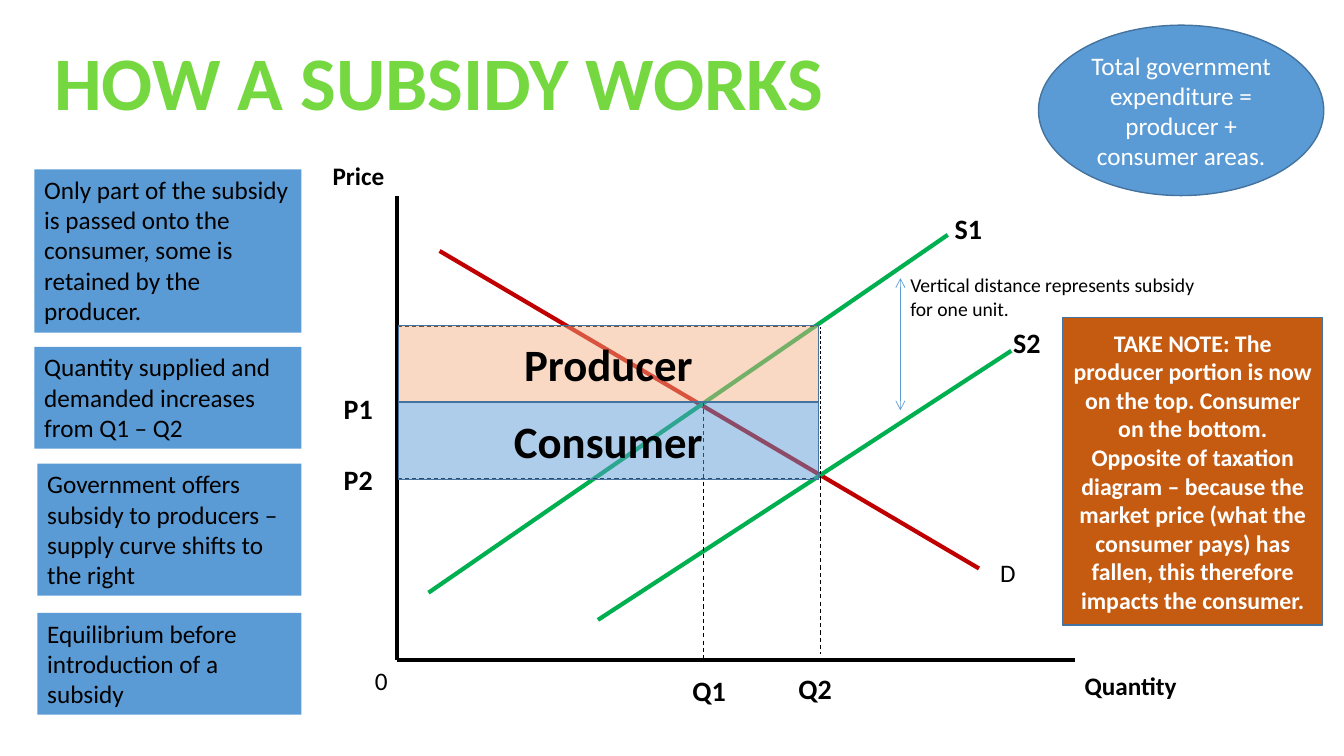
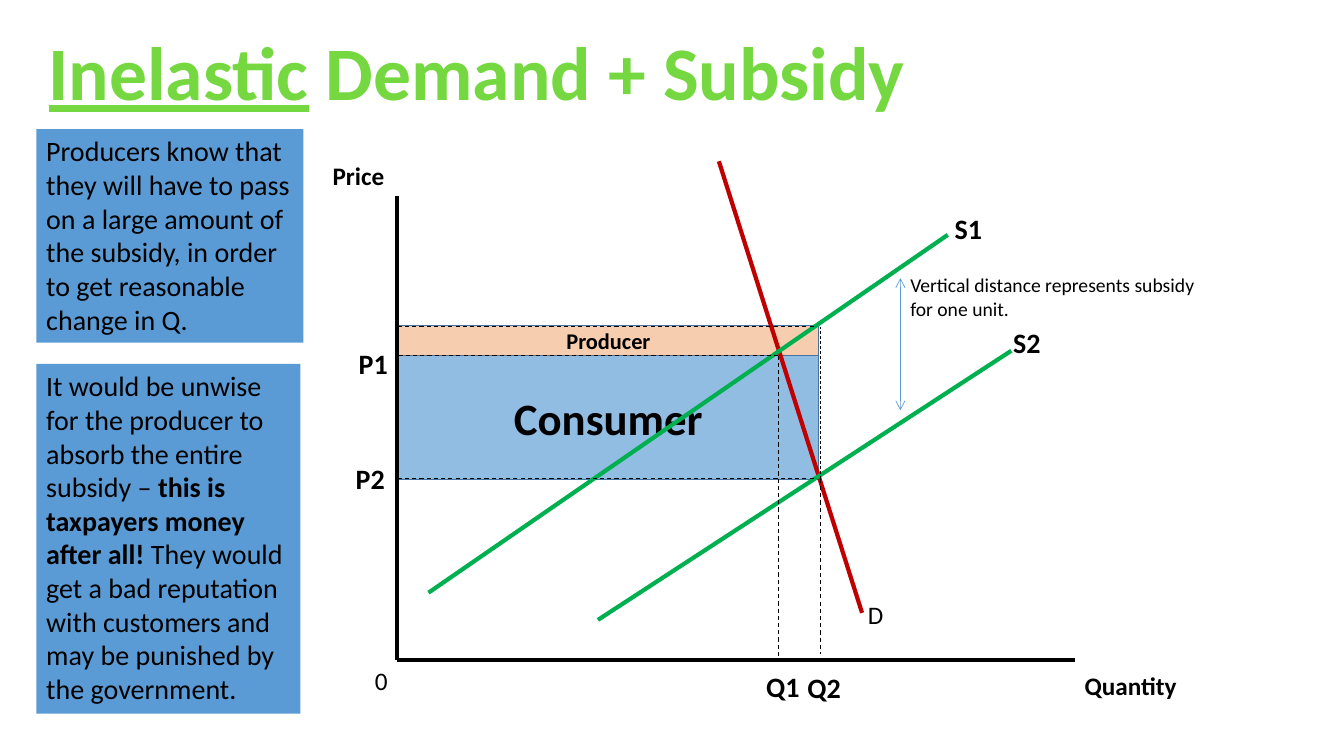
from lxml.etree import SubElement
from pptx import Presentation
from pptx.dml.color import RGBColor
from pptx.enum.dml import MSO_LINE
from pptx.enum.shapes import MSO_CONNECTOR, MSO_SHAPE
from pptx.enum.text import MSO_ANCHOR, MSO_AUTO_SIZE, PP_ALIGN
from pptx.oxml.ns import qn
from pptx.util import Inches, Pt

FONT = "Calibri"
BLACK, WHITE = "000000", "FFFFFF"
TITLE_GREEN, SUPPLY_GREEN, DEMAND_RED = "75D840", "00B050", "C00000"
BLUE, BLUE_EDGE, ORANGE, PEACH = "5B9BD5", "43739E", "C55A11", "F4B183"

PRICE_AXIS, QUANTITY_AXIS = 3.94, 6.55
TOP_PRICE, P2, Q2 = 3.24, 4.75, 8.14
AREA_LEFT, AREA_WIDTH, AREA_TOP, AREA_BOTTOM = 3.95, 4.17, 3.23, 4.76
AREA_LABEL_SIZE, LINE_HEIGHT = 32, 1.3

AXES = [(PRICE_AXIS, 1.94, PRICE_AXIS, QUANTITY_AXIS),
        (PRICE_AXIS, QUANTITY_AXIS, 10.66, QUANTITY_AXIS)]
SUPPLY_CURVES = [(4.25, 5.88, 9.4, 2.33), (5.93, 6.15, 10.03, 3.48)]
SHARED_LABELS = [
    ("Quantity", 10.66, 6.6, 18, True),
    ("Price", 3.2, 1.54, 18, True),
    ("0", 3.62, 6.55, 18, False),
    ("S1", 9.37, 2.05, 20, True),
    ("S2", 9.95, 3.18, 20, True),
]
DISTANCE_NOTE = "Vertical distance represents subsidy\vfor one unit."

SLIDES = [
    {
        "title": [("HOW A SUBSIDY WORKS", {})],
        "title_at": (0.4, 0.3, 7.91, 1.01),
        "demand": (4.36, 2.49, 9.71, 5.64),
        "q1": 6.98, "p1": 3.99,
        "areas_in_front": True,
        "opacity": {"Producer": 48, "Consumer": 49},
        "labels": [("D", 9.82, 5.48, 18, False), ("Q1", 6.77, 6.63, 20, True),
                   ("P1", 3.31, 3.83, 20, True), ("Q2", 7.82, 6.61, 20, True),
                   ("P2", 3.31, 4.54, 20, True)],
        "note_size": 18,
        "notes": [
            ((0.34, 1.68, 2.65, 1.62), [("Only part of the subsidy\vis passed onto the consumer, "
                                         "some is retained by the producer.", {})]),
            ((0.34, 3.44, 2.65, 1.01), [("Quantity supplied and demanded increases from Q1 – Q2", {})]),
            ((0.37, 4.6, 2.62, 1.31), [("Government offers subsidy to producers – "
                                        "supply curve shifts to the right", {})]),
            ((0.37, 6.08, 2.62, 1.01), [("Equilibrium before introduction of a subsidy", {})]),
        ],
        "callouts": [
            (MSO_SHAPE.OVAL, (10.3, 0.25, 2.83, 1.69), BLUE, 18, False,
             "Total government expenditure = producer + consumer areas."),
            (MSO_SHAPE.RECTANGLE, (10.54, 3.15, 2.58, 3.05), ORANGE, 17, True,
             "TAKE NOTE: The producer portion is now on the top. Consumer on the bottom. "
             "Opposite of taxation diagram – because the market price (what the consumer pays) "
             "has fallen, this therefore impacts the consumer."),
        ],
    },
    {
        "title": [("Inelastic", {"underline": True}), (" Demand + Subsidy", {})],
        "title_at": (0.34, 0.2, 8.78, 1.01),
        "demand": (7.13, 1.6, 8.55, 6.08),
        "q1": 7.72, "p1": 3.53,
        "areas_in_front": False,
        "opacity": {"Producer": 64, "Consumer": 66},
        "labels": [("D", 8.51, 5.9, 18, False), ("Q1", 7.5, 6.59, 20, True),
                   ("P1", 3.46, 3.39, 20, True), ("Q2", 7.91, 6.6, 20, True),
                   ("P2", 3.43, 4.53, 20, True)],
        "note_size": 20,
        "notes": [
            ((0.36, 1.28, 2.65, 2.12), [("Producers know that they will have to pass on a large amount "
                                         "of the subsidy, in order to get reasonable change in Q.", {})]),
            ((0.36, 3.61, 2.62, 3.47), [
                ("It would be unwise for the producer to absorb the entire subsidy – ", {}),
                ("this is taxpayers money after all! ", {"bold": True}),
                ("They would get a bad reputation with customers and may be punished "
                 "by the government.", {})]),
        ],
        "callouts": [],
    },
]


def rgb(value):
    return RGBColor.from_string(value)


def write(shape, spans, size, color=BLACK, bold=None, align=PP_ALIGN.LEFT,
          anchor=MSO_ANCHOR.TOP, wrap=True):
    frame = shape.text_frame
    frame.word_wrap = wrap
    frame.auto_size = MSO_AUTO_SIZE.NONE
    frame.vertical_anchor = anchor
    para = frame.paragraphs[0]
    para.alignment = align
    para.font.name, para.font.size, para.font.bold = FONT, Pt(size), bold
    para.font.color.rgb = rgb(color)
    for text, style in spans:
        for index, piece in enumerate(text.split("\v")):
            if index:
                para.add_line_break()
            span = para.add_run()
            span.text = piece
            for name, value in style.items():
                setattr(span.font, name, value)


def add_text(page, place, text, size, bold=False):
    box = page.shapes.add_textbox(*map(Inches, place))
    write(box, [(text, {})], size, bold=bold)


def add_panel(page, kind, place, fill, edge=None, opacity=None):
    panel = page.shapes.add_shape(kind, *map(Inches, place))
    panel.shadow.inherit = False
    panel.fill.solid()
    panel.fill.fore_color.rgb = rgb(fill)
    if opacity:
        color = panel.fill._xPr.find(".//" + qn("a:srgbClr"))
        SubElement(color, qn("a:alpha"), val=str(opacity * 1000))
    if edge:
        panel.line.color.rgb = rgb(edge)
        panel.line.width = Pt(1)
    else:
        panel.line.fill.background()
    return panel


def add_line(page, ends, color, width, dashed=False, arrows=False):
    line = page.shapes.add_connector(MSO_CONNECTOR.STRAIGHT, *map(Inches, ends))
    line.line.color.rgb = rgb(color)
    line.line.width = Pt(width)
    if dashed:
        line.line.dash_style = MSO_LINE.DASH
    properties = line._element.spPr
    if arrows:
        for end in ("a:headEnd", "a:tailEnd"):
            SubElement(properties.find(qn("a:ln")), qn(end), type="arrow")
    SubElement(properties, qn("a:effectLst"))


def add_areas(page, content):
    split = content["p1"]
    for name, fill, top, bottom in (("Consumer", BLUE, split, AREA_BOTTOM),
                                    ("Producer", PEACH, AREA_TOP, split)):
        height = bottom - top
        area = add_panel(page, MSO_SHAPE.RECTANGLE, (AREA_LEFT, top, AREA_WIDTH, height),
                         fill, BLUE_EDGE, content["opacity"][name])
        area.text_frame.margin_top = area.text_frame.margin_bottom = 0
        size = min(AREA_LABEL_SIZE, int(height * 72 / LINE_HEIGHT))
        write(area, [(name, {})], size, bold=True, align=PP_ALIGN.CENTER, anchor=MSO_ANCHOR.MIDDLE)


def add_diagram(page, content):
    q1, p1 = content["q1"], content["p1"]
    if not content["areas_in_front"]:
        add_areas(page, content)
    for axis in AXES:
        add_line(page, axis, BLACK, 3)
    add_line(page, content["demand"], DEMAND_RED, 3)
    for curve in SUPPLY_CURVES:
        add_line(page, curve, SUPPLY_GREEN, 3)
    for guide in ((q1, p1, q1, QUANTITY_AXIS), (q1, p1, PRICE_AXIS, p1),
                  (Q2, P2, Q2, 6.49), (8.07, P2, PRICE_AXIS, P2),
                  (8.07, TOP_PRICE, PRICE_AXIS, TOP_PRICE)):
        add_line(page, guide, BLACK, 0.75, dashed=True)
    add_line(page, (Q2, P2, Q2, TOP_PRICE), BLACK, 0.5, dashed=True)
    add_line(page, (8.93, 2.76, 8.93, 4.07), BLUE, 0.5, arrows=True)
    for text, left, top, size, bold in SHARED_LABELS + content["labels"]:
        add_text(page, (left, top, 1.5 if size == 18 else 0.8, 0.42), text, size, bold)
    add_text(page, (8.93, 2.66, 3.1, 0.57), DISTANCE_NOTE, 14)
    if content["areas_in_front"]:
        add_areas(page, content)


def build_slide(deck, content):
    page = deck.slides.add_slide(deck.slide_layouts[5])
    title = page.shapes.title
    title.left, title.top, title.width, title.height = map(Inches, content["title_at"])
    write(title, content["title"], 54, TITLE_GREEN, True, PP_ALIGN.CENTER, wrap=False)
    add_diagram(page, content)
    for place, spans in content["notes"]:
        write(add_panel(page, MSO_SHAPE.RECTANGLE, place, BLUE), spans, content["note_size"])
    for kind, place, fill, size, bold, text in content["callouts"]:
        callout = add_panel(page, kind, place, fill, BLUE_EDGE)
        write(callout, [(text, {})], size, WHITE, bold, PP_ALIGN.CENTER, MSO_ANCHOR.MIDDLE)


def main():
    deck = Presentation()
    deck.slide_width, deck.slide_height = Inches(13.33), Inches(7.5)
    for content in SLIDES:
        build_slide(deck, content)
    deck.save("out.pptx")


if __name__ == "__main__":
    main()
